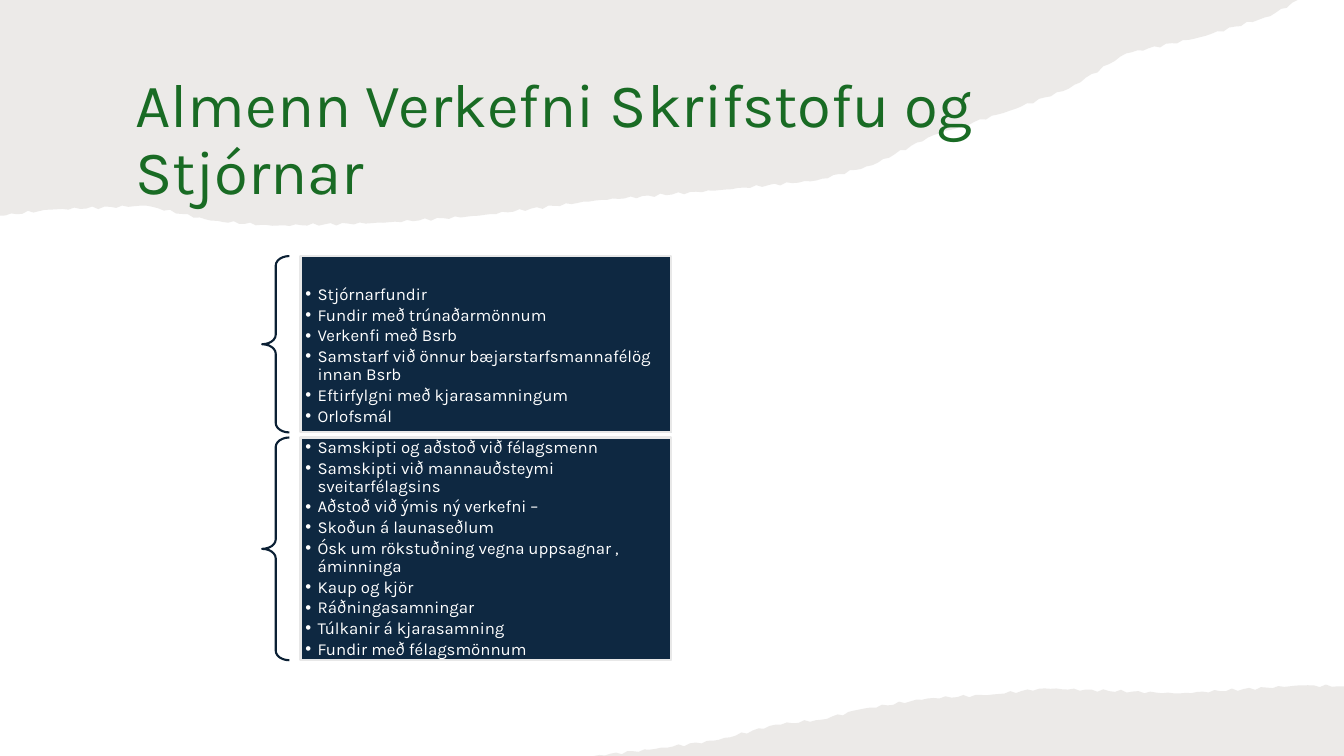
from itertools import pairwise
from math import ceil, pi, sin

from lxml.etree import SubElement
from pptx import Presentation
from pptx.dml.color import RGBColor
from pptx.enum.shapes import MSO_SHAPE
from pptx.enum.text import MSO_ANCHOR, MSO_AUTO_SIZE, PP_ALIGN
from pptx.oxml.ns import qn
from pptx.util import Inches, Pt

SLIDE_W, SLIDE_H = 13.33, 7.5
COLORS = {"paper": "82766A", "title": "196B24", "box": "0E2841",
          "edge": "E8E8E8", "brace": "0B2034", "text": "FFFFFF"}
FONT = "Karla"

# The course of each tear, in inches; torn_edge() adds the rough detail.
TOP_COURSE = [(12.87, 0), (12.6, 0.16), (11.9, 0.37), (11.17, 0.53),
              (10.6, 0.88), (10.01, 1.1), (9.26, 1.34), (8.65, 1.64),
              (8.1, 1.79), (7.2, 1.88), (5.9, 1.99), (4.75, 2.14),
              (3.8, 2.21), (2.7, 2.24), (2.1, 2.19), (1.45, 2.04),
              (0.5, 2.08), (0, 2.14)]
BOTTOM_COURSE = [(5.89, 7.5), (6.5, 7.43), (7.13, 7.34), (7.69, 7.19),
                 (8.15, 7.14), (8.52, 7.04), (9.2, 6.93), (9.85, 6.89),
                 (10.36, 6.83), (11.7, 6.88), (12.91, 6.8), (SLIDE_W, 6.81)]

BOARD_TASKS = [
    "Stjórnarfundir", "Fundir með trúnaðarmönnum", "Verkenfi með Bsrb",
    "Samstarf við önnur bæjarstarfsmannafélög innan Bsrb",
    "Eftirfylgni með kjarasamningum", "Orlofsmál"]
OFFICE_TASKS = [
    "Samskipti og aðstoð við félagsmenn",
    "Samskipti við mannauðsteymi sveitarfélagsins",
    "Aðstoð við ýmis ný verkefni –", "Skoðun á launaseðlum",
    "Ósk um rökstuðning vegna uppsagnar , áminninga", "Kaup og kjör",
    "Ráðningasamningar", "Túlkanir á kjarasamning", "Fundir með félagsmönnum"]

GROUP_LEFT, GROUP_TOP, GROUP_W, GROUP_GAP = 2.6, 2.54, 4.06, 0.05
BRACE_W, LIST_OFFSET = 0.27, 0.38
INSET = 0.05


def rgb(name):
    return RGBColor.from_string(COLORS[name])


def place(sp, left, top, width, height):
    sp.left, sp.top = Inches(left), Inches(top)
    sp.width, sp.height = Inches(width), Inches(height)


def set_line(sp, color):
    sp.line.color.rgb, sp.line.width = rgb(color), Pt(1.5)


def set_fill(sp, color):
    sp.fill.solid()
    sp.fill.fore_color.rgb = rgb(color)


def write(tf, paragraphs, size, color, bullet=False, after=0):
    tf.word_wrap = True
    tf.auto_size = MSO_AUTO_SIZE.NONE
    tf.vertical_anchor = MSO_ANCHOR.MIDDLE
    for i, text in enumerate(paragraphs):
        p = tf.paragraphs[0] if i == 0 else tf.add_paragraph()
        p.alignment = PP_ALIGN.LEFT
        p.line_spacing = 0.9
        p.space_before, p.space_after = Pt(0), Pt(after)
        if bullet:
            pPr = p._p.get_or_add_pPr()
            pPr.set("marL", str(Inches(0.12)))
            pPr.set("indent", str(-Inches(0.12)))
            SubElement(pPr, qn("a:buChar"), char="•")
        r = p.add_run()
        r.text = text
        r.font.name, r.font.size = FONT, Pt(size)
        r.font.color.rgb = rgb(color)


def torn_edge(course, step=0.06, roughness=0.015):
    """Join the points of a course with a rippled line that meets each point."""
    edge = []
    for (x0, y0), (x1, y1) in pairwise(course):
        steps = ceil(abs(x1 - x0) / step)
        for i in range(steps):
            t = i / steps
            x = x0 + t * (x1 - x0)
            ripple = roughness * sin(40 * x) * sin(pi * t)
            edge.append((x, y0 + t * (y1 - y0) + ripple))
    return edge + [course[-1]]


def add_torn_paper(s, corner, course):
    """Fill from a slide corner to the torn edge, behind everything else."""
    start, *rest = [(Inches(x), Inches(y))
                    for x, y in [corner, *torn_edge(course)]]
    builder = s.shapes.build_freeform(*start)
    builder.add_line_segments(rest, close=True)
    sp = builder.convert_to_shape()
    sp.shadow.inherit = False
    set_fill(sp, "paper")
    color = sp._element.spPr.find(qn("a:solidFill"))[0]
    SubElement(color, qn("a:alpha"), val="15000")
    sp.line.fill.background()
    s.shapes._spTree.insert(2, sp._element)


def add_title(s, text, *box):
    place(s.shapes.title, *box)
    write(s.shapes.title.text_frame, [text], 44, "title")


def add_brace(s, *box):
    brace = s.shapes.add_shape(MSO_SHAPE.LEFT_BRACE, *map(Inches, box))
    brace.adjustments[0], brace.adjustments[1] = 0.35, 0.5
    brace.shadow.inherit = False
    brace.fill.background()
    set_line(brace, "brace")


def add_task_group(s, body, tasks, left, top, width, height, lead):
    """Put a brace beside a filled task list; lead is free space above it."""
    add_brace(s, left, top, BRACE_W, height)
    place(body, left + LIST_OFFSET, top, width - LIST_OFFSET, height)
    set_fill(body, "box")
    set_line(body, "edge")
    tf = body.text_frame
    tf.margin_left = tf.margin_right = tf.margin_bottom = Inches(INSET)
    tf.margin_top = Inches(INSET + lead)
    write(tf, tasks, 12, "text", bullet=True, after=1.8)


def add_task_groups(s, left, top, width):
    """Stack the task groups downwards with an equal gap."""
    groups = [(s.placeholders[1], BOARD_TASKS, 1.75, 0.23),
              (s.placeholders[2], OFFICE_TASKS, 2.21, 0)]
    for body, tasks, height, lead in groups:
        add_task_group(s, body, tasks, left, top, width, height, lead)
        top += height + GROUP_GAP


def main():
    prs = Presentation()
    prs.slide_width, prs.slide_height = Inches(SLIDE_W), Inches(SLIDE_H)
    two_content = prs.slide_layouts[3]
    s = prs.slides.add_slide(two_content)
    add_torn_paper(s, (0, 0), TOP_COURSE)
    add_torn_paper(s, (SLIDE_W, SLIDE_H), BOTTOM_COURSE)
    add_title(s, "Almenn Verkefni Skrifstofu og Stjórnar", 1.24, 0.67, 10.27, 1.46)
    add_task_groups(s, GROUP_LEFT, GROUP_TOP, GROUP_W)
    prs.save("out.pptx")


if __name__ == "__main__":
    main()
